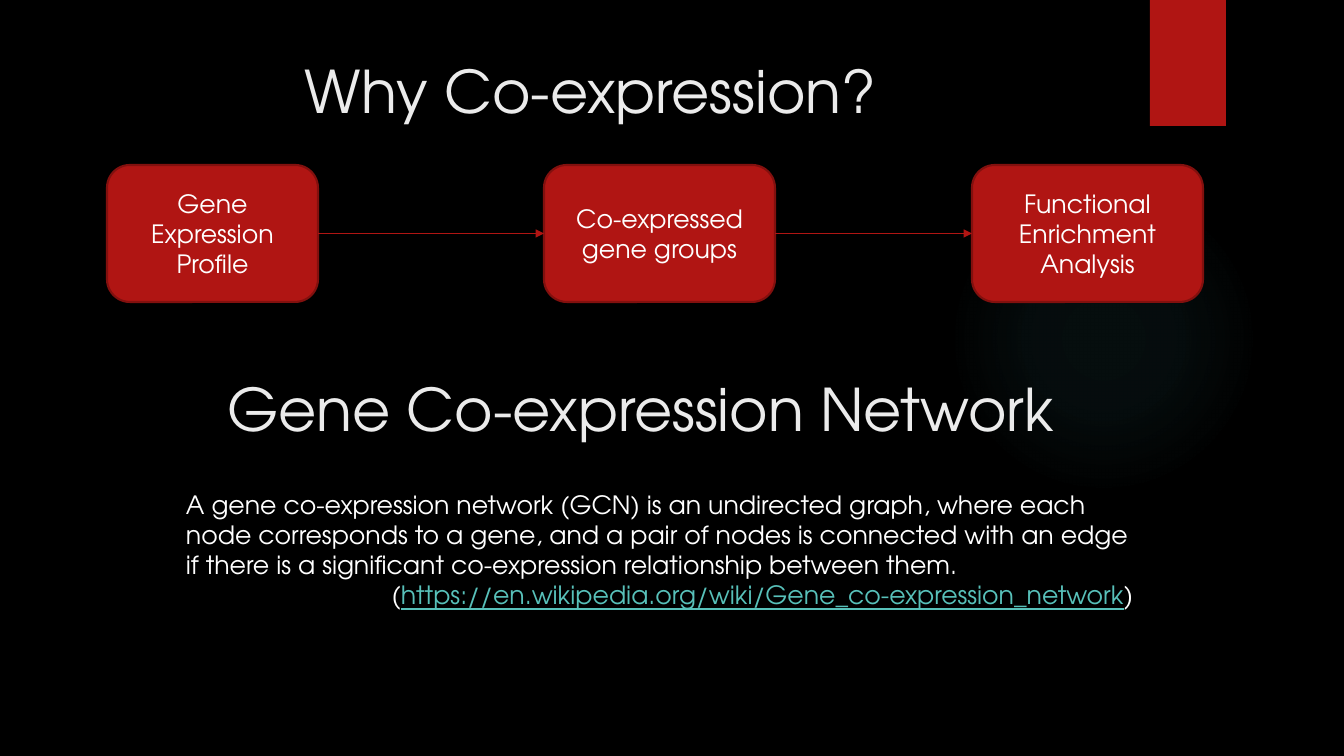
from lxml.etree import SubElement
from pptx import Presentation
from pptx.dml.color import RGBColor
from pptx.enum.shapes import MSO_CONNECTOR as Connector, MSO_SHAPE as Shape
from pptx.enum.text import MSO_ANCHOR as Anchor, PP_ALIGN as Align
from pptx.oxml import parse_xml
from pptx.oxml.ns import nsdecls, qn
from pptx.util import Pt

SCALE = 914400 / 100.8
COLORS = {
    "background": "000000",
    "red": "B01513",
    "outline": "82100E",
    "glow": "50B9C1",
    "heading": "EBEBEB",
    "text": "FFFFFF",
    "link": "58C1BA",
}
HEADING = {"size": Pt(42), "color": "heading"}
BODY = {"size": Pt(18), "color": "text"}
LINK = {**BODY, "color": "link", "underline": True}


def px(*lengths):
    return [round(length * SCALE) for length in lengths]


def rgb(name):
    return RGBColor.from_string(COLORS[name])


class SlideBuilder:
    font_name = "TeX Gyre Adventor"

    def __init__(self, presentation):
        self.slide = presentation.slides.add_slide(presentation.slide_layouts[6])
        fill = self.slide.background.fill
        fill.solid()
        fill.fore_color.rgb = rgb("background")

    def fill_text(self, shape, paragraphs, anchor=Anchor.TOP):
        frame = shape.text_frame
        frame.word_wrap = True
        frame.vertical_anchor = anchor
        for index, (alignment, runs) in enumerate(paragraphs):
            paragraph = frame.add_paragraph() if index else frame.paragraphs[0]
            paragraph.alignment = alignment
            for text, style in runs:
                run = paragraph.add_run()
                run.text = text
                run.font.name = self.font_name
                for attribute, value in style.items():
                    if attribute == "color":
                        run.font.color.rgb = rgb(value)
                    else:
                        setattr(run.font, attribute, value)

    def text(self, box, paragraphs):
        self.fill_text(self.slide.shapes.add_textbox(*px(*box)), paragraphs)

    def shape(self, kind, box, fill, outline=None):
        shape = self.slide.shapes.add_shape(kind, *px(*box))
        shape.shadow.inherit = False
        shape.fill.solid()
        shape.fill.fore_color.rgb = rgb(fill)
        if outline:
            shape.line.color.rgb = rgb(outline)
            shape.line.width = Pt(1.5)
        else:
            shape.line.fill.background()
        return shape

    def glow(self, box, stops):
        shape = self.shape(Shape.OVAL, box, "glow")
        stop_xml = "".join(
            f'<a:gs pos="{position * 1000}"><a:srgbClr val="{COLORS["glow"]}">'
            f'<a:alpha val="{opacity * 1000}"/></a:srgbClr></a:gs>'
            for position, opacity in stops
        )
        gradient = parse_xml(
            f'<a:gradFill {nsdecls("a")} rotWithShape="1"><a:gsLst>{stop_xml}</a:gsLst>'
            '<a:path path="circle"><a:fillToRect l="50000" t="50000" r="50000" b="50000"/>'
            "</a:path></a:gradFill>"
        )
        properties = shape.element.spPr
        properties.replace(properties.find(qn("a:solidFill")), gradient)

    def step(self, box, label):
        shape = self.shape(Shape.ROUNDED_RECTANGLE, box, "red", "outline")
        self.fill_text(shape, [(Align.CENTER, [(label, BODY)])], Anchor.MIDDLE)
        return shape

    def arrow(self, source, target):
        connector = self.slide.shapes.add_connector(Connector.STRAIGHT, 0, 0, 0, 0)
        connector.begin_connect(source, 3)
        connector.end_connect(target, 1)
        connector.line.color.rgb = rgb("red")
        connector.line.width = Pt(0.75)
        properties = connector.element.spPr
        SubElement(properties.find(qn("a:ln")), qn("a:tailEnd"), type="triangle")
        SubElement(properties, qn("a:effectLst"))


def main():
    presentation = Presentation()
    presentation.slide_width, presentation.slide_height = px(1344, 756)
    builder = SlideBuilder(presentation)

    builder.glow((949, 184, 310, 310), [(0, 7), (36, 6), (69, 0)])
    builder.shape(Shape.RECTANGLE, (1150, 0, 76, 126), "red")

    headings = [
        ((72, 50, 1037, 154), "Why Co-expression?"),
        ((122, 368, 1037, 91), "Gene Co-expression Network"),
    ]
    for box, heading in headings:
        builder.text(box, [(Align.CENTER, [(heading, HEADING)])])

    steps = [
        builder.step((left, 165, width, 137), label)
        for left, width, label in [
            (107, 211, "Gene Expression Profile"),
            (544, 231, "Co-expressed gene groups"),
            (972, 231, "Functional Enrichment Analysis"),
        ]
    ]
    for source, target in zip(steps, steps[1:]):
        builder.arrow(source, target)

    definition = (
        "A gene co-expression network (GCN) is an undirected graph, where each node "
        "corresponds to a gene, and a pair of nodes is connected with an edge if there "
        "is a significant co-expression relationship between them."
    )
    address = "https://en.wikipedia.org/wiki/Gene_co-expression_network"
    builder.text(
        (176, 484, 967, 132),
        [
            (Align.LEFT, [(definition, BODY)]),
            (Align.RIGHT, [("(", BODY), (address, LINK), (")", BODY)]),
        ],
    )
    presentation.save("out.pptx")


if __name__ == "__main__":
    main()
